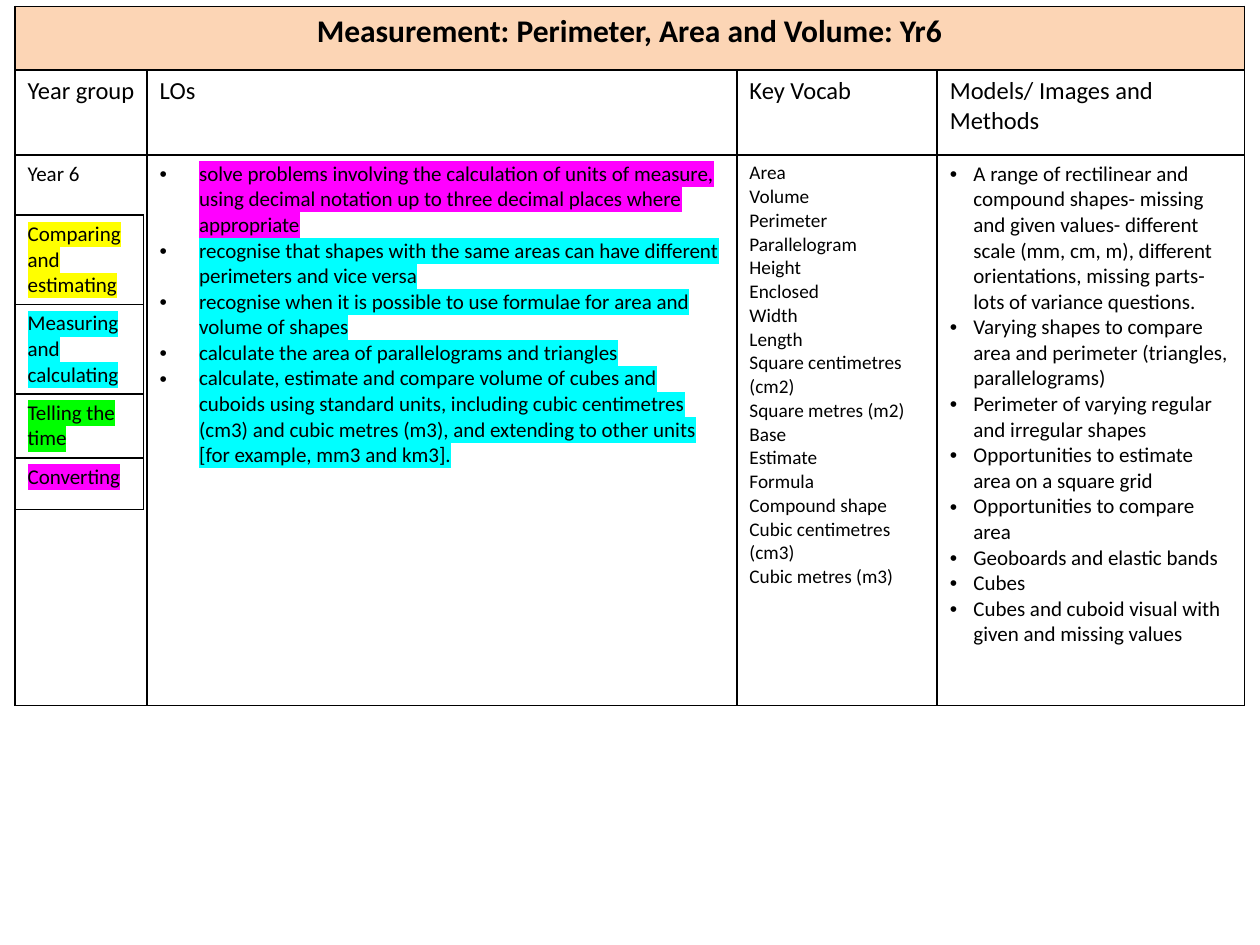
from dataclasses import dataclass

from lxml.etree import SubElement
from pptx import Presentation
from pptx.dml.color import RGBColor
from pptx.enum.text import PP_ALIGN
from pptx.oxml.ns import qn
from pptx.util import Pt


@dataclass(frozen=True)
class Theme:
    font: str = "Calibri"
    ink: str = "000000"
    banner: str = "FCD5B5"
    estimating: str = "FFFF00"
    calculating: str = "00FFFF"
    time: str = "00FF00"
    converting: str = "FF00FF"
    title: int = 18
    heading: int = 14
    body: int = 12
    vocab: int = 11
    border: int = 1


THEME = Theme()

TITLE = "Measurement: Perimeter, Area and Volume: Yr6"
HEADINGS = ["Year group", "LOs", "Key Vocab", "Models/ Images and Methods"]
OBJECTIVES = [
    ("solve problems involving the calculation of units of measure, using decimal "
     "notation up to three decimal places where appropriate", THEME.converting),
    ("recognise that shapes with the same areas can have different perimeters "
     "and vice versa", THEME.calculating),
    ("recognise when it is possible to use formulae for area and volume of shapes",
     THEME.calculating),
    ("calculate the area of parallelograms and triangles", THEME.calculating),
    ("calculate, estimate and compare volume of cubes and cuboids using standard "
     "units, including cubic centimetres (cm3) and cubic metres (m3), and extending "
     "to other units [for example, mm3 and km3].", THEME.calculating),
]
VOCAB = [
    "Area", "Volume", "Perimeter", "Parallelogram", "Height", "Enclosed", "Width",
    "Length", "Square centimetres (cm2)", "Square metres (m2)", "Base", "Estimate",
    "Formula", "Compound shape", "Cubic centimetres (cm3)", "Cubic metres (m3)",
]
METHODS = [
    "A range of rectilinear and compound shapes- missing and given values- different "
    "scale (mm, cm, m), different orientations, missing parts- lots of variance questions.",
    "Varying shapes to compare area and perimeter (triangles, parallelograms)",
    "Perimeter of varying regular and irregular shapes",
    "Opportunities to estimate area on a square grid",
    "Opportunities to compare area",
    "Geoboards and elastic bands",
    "Cubes",
    "Cubes and cuboid visual with given and missing values",
]
STRANDS = [
    ("Comparing and estimating", THEME.estimating),
    ("Measuring and calculating", THEME.calculating),
    ("Telling the time", THEME.time),
    ("Converting", THEME.converting),
]


def set_borders(cell):
    tcPr = cell._tc.get_or_add_tcPr()
    for side in ("lnL", "lnR", "lnT", "lnB"):
        ln = SubElement(tcPr, qn(f"a:{side}"), w=str(Pt(THEME.border)))
        fill = SubElement(ln, qn("a:solidFill"))
        SubElement(fill, qn("a:srgbClr"), val=THEME.ink)


def add_table(s, left, top, cols, rows):
    frame = s.shapes.add_table(len(rows), len(cols), Pt(left), Pt(top),
                               Pt(sum(cols)), Pt(sum(rows)))
    table = frame.table
    table.first_row = table.horz_banding = False
    for column, width in zip(table.columns, cols):
        column.width = Pt(width)
    for row, height in zip(table.rows, rows):
        row.height = Pt(height)
    for cell in table.iter_cells():
        set_borders(cell)
        cell.fill.background()
    return table


def set_bullet(p, indent):
    pPr = p._p.get_or_add_pPr()
    pPr.set("marL", str(Pt(indent)))
    pPr.set("indent", str(-Pt(indent)))
    SubElement(pPr, qn("a:buFont"), typeface="Arial")
    SubElement(pPr, qn("a:buChar"), char="•")


def set_highlight(r, color):
    highlight = r._r.rPr.makeelement(qn("a:highlight"))
    SubElement(highlight, qn("a:srgbClr"), val=color)
    r._r.rPr.find(qn("a:solidFill")).addnext(highlight)


def write_cell(cell, items, size, indent=None, bold=False, align=PP_ALIGN.LEFT):
    tf = cell.text_frame
    style = {"name": THEME.font, "size": Pt(size), "bold": bold}
    for i, (text, highlight) in enumerate(items):
        p = tf.add_paragraph() if i else tf.paragraphs[0]
        p.alignment = align
        if indent:
            set_bullet(p, indent)
        r = p.add_run()
        r.text = text
        for name, value in style.items():
            setattr(r.font, name, value)
        r.font.color.rgb = RGBColor.from_string(THEME.ink)
        if highlight:
            set_highlight(r, highlight)


def plain(*texts):
    return [(text, None) for text in texts]


def add_plan(s):
    table = add_table(s, 8.6, 3.6, [75.5, 337, 114.5, 175.5], [36.5, 48.5, 314.5])
    banner = table.cell(0, 0)
    banner.merge(table.cell(0, 3))
    banner.fill.solid()
    banner.fill.fore_color.rgb = RGBColor.from_string(THEME.banner)
    write_cell(banner, plain(TITLE), THEME.title, bold=True, align=PP_ALIGN.CENTER)
    for col, heading in enumerate(HEADINGS):
        write_cell(table.cell(1, col), plain(heading), THEME.heading)
    write_cell(table.cell(2, 0), plain("Year 6"), THEME.body)
    write_cell(table.cell(2, 1), OBJECTIVES, THEME.body, indent=22.5)
    write_cell(table.cell(2, 2), plain(*VOCAB), THEME.vocab)
    write_cell(table.cell(2, 3), plain(*METHODS), THEME.body, indent=13.5)


def add_strand_key(s):
    table = add_table(s, 8.6, 123, [73.5], [51, 51, 36.5, 29.5])
    for row, strand in enumerate(STRANDS):
        write_cell(table.cell(row, 0), [strand], THEME.body)


def main():
    prs = Presentation()
    prs.slide_width, prs.slide_height = Pt(720), Pt(540)
    s = prs.slides.add_slide(prs.slide_layouts[6])
    add_plan(s)
    add_strand_key(s)
    prs.save("out.pptx")


if __name__ == "__main__":
    main()
